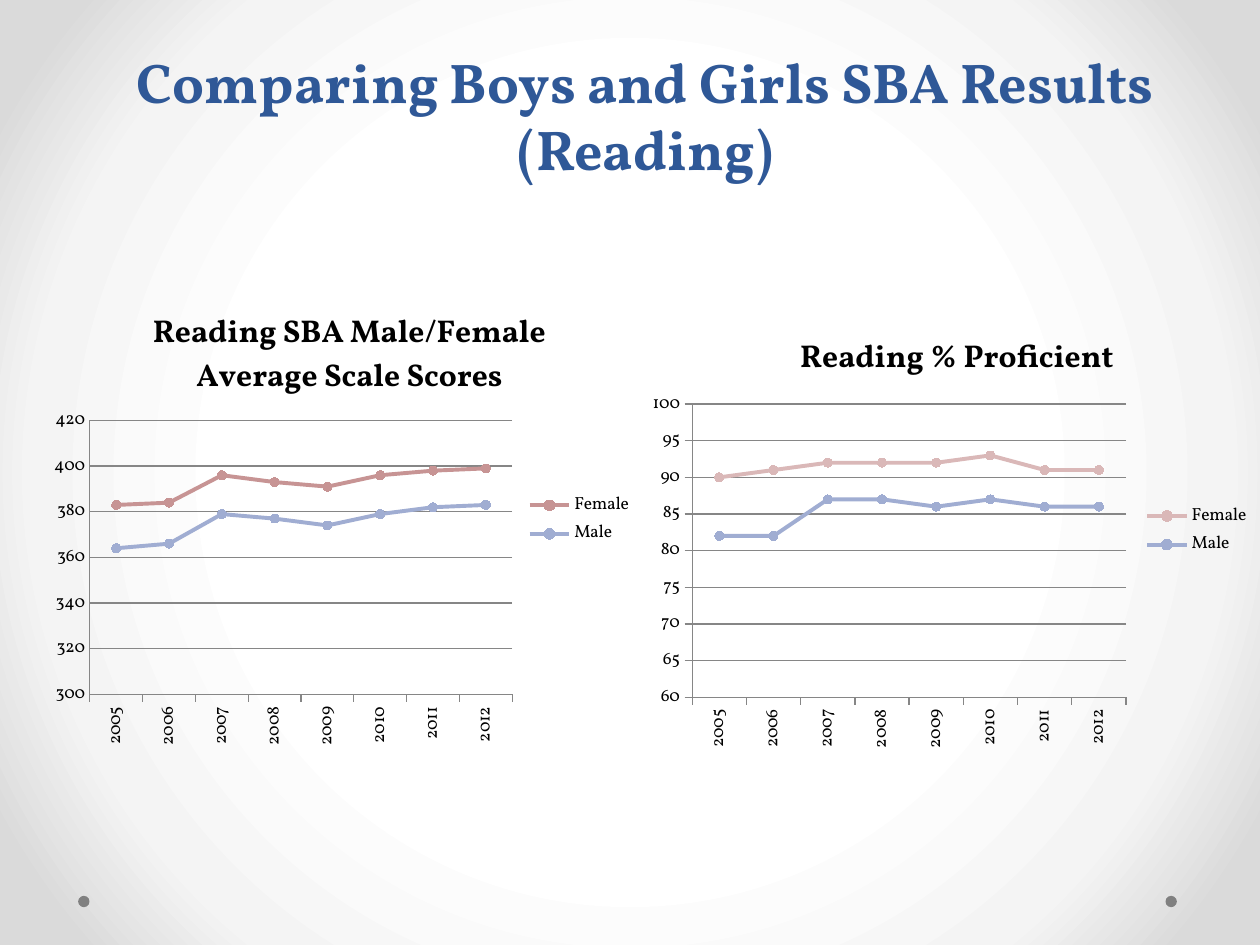
import lxml.etree
import pptx
import pptx.chart.data
import pptx.dml.color
import pptx.enum.chart
import pptx.enum.shapes
import pptx.enum.text
import pptx.oxml
import pptx.oxml.ns
import pptx.util

Pt = pptx.util.Pt
RGBColor = pptx.dml.color.RGBColor
XL = pptx.enum.chart
qn = pptx.oxml.ns.qn

FONT = "Vollkorn"
BLACK = RGBColor(0x00, 0x00, 0x00)
TITLE_BLUE = RGBColor(0x2F, 0x58, 0x97)
DOT_GRAY = RGBColor(0x80, 0x80, 0x80)
GRID_GRAY = RGBColor(0x86, 0x86, 0x86)
ROSE = RGBColor(0xC7, 0x94, 0x94)
PALE_ROSE = RGBColor(0xDA, 0xB8, 0xB8)
PERIWINKLE = RGBColor(0xA0, 0xAD, 0xD2)
BACKDROP = [(50, RGBColor(0xFF, 0xFF, 0xFF)), (76, RGBColor(0xF4, 0xF4, 0xF4)),
            (92, RGBColor(0xDA, 0xDA, 0xDA))]

YEARS = [str(year) for year in range(2005, 2013)]
CHARTS = [
    dict(box=(23.76, 162, 344.88, 270), title="Reading SBA Male/Female Average Scale Scores",
         scale=(300, 420, 20), tick=XL.XL_TICK_MARK.NONE,
         title_at=(0.175, 0.04), plot_at=(0.08, 0.29, 0.7, 0.58),
         series=[("Female", ROSE, (383, 384, 396, 393, 391, 396, 398, 399)),
                 ("Male", PERIWINKLE, (364, 366, 379, 377, 374, 379, 382, 383))]),
    dict(box=(367.2, 174.24, 354.24, 257.76), title="Reading % Proficient",
         scale=(60, 100, 5), tick=XL.XL_TICK_MARK.OUTSIDE,
         title_at=(0.245, 0.05), plot_at=(0.08, 0.22, 0.7, 0.65),
         series=[("Female", PALE_ROSE, (90, 91, 92, 92, 92, 93, 91, 91)),
                 ("Male", PERIWINKLE, (82, 82, 87, 87, 86, 87, 86, 86))]),
]


def set_attrs(obj, values):
    for name, value in values.items():
        setattr(obj, name, value)


def set_font(font, size, color=BLACK, bold=False):
    set_attrs(font, dict(name=FONT, size=Pt(size), bold=bold))
    font.color.rgb = color


def set_line(line, width, color):
    line.width = Pt(width)
    line.color.rgb = color


def set_layout(parent, index, place, inner=False):
    """Give a chart part a manual position, in fractions of the chart."""
    for old in parent.findall(qn("c:layout")):
        parent.remove(old)
    layout = lxml.etree.Element(qn("c:layout"))
    manual = lxml.etree.SubElement(layout, qn("c:manualLayout"))
    settings = [("layoutTarget", "inner")] if inner else []
    settings += [("xMode", "edge"), ("yMode", "edge")]
    settings += zip("xywh", place)
    for tag, value in settings:
        lxml.etree.SubElement(manual, qn("c:" + tag)).set("val", str(value))
    parent.insert(index, layout)


def add_backdrop(slide):
    """Radial gradient, light in the middle."""
    fill = slide.background.fill
    fill.gradient()
    grad = slide.background._cSld.find(".//" + qn("a:gradFill"))
    stops = "".join(f'<a:gs pos="{pos * 1000}"><a:srgbClr val="{color}"/></a:gs>'
                    for pos, color in BACKDROP)
    new = pptx.oxml.parse_xml(
        f'<a:gradFill {pptx.oxml.ns.nsdecls("a")} rotWithShape="1"><a:gsLst>{stops}</a:gsLst>'
        '<a:path path="circle"><a:fillToRect l="50000" t="50000" r="50000" b="50000"/></a:path>'
        '</a:gradFill>')
    grad.getparent().replace(grad, new)


def add_dot(slide, left, top, size):
    sp = slide.shapes.add_shape(pptx.enum.shapes.MSO_SHAPE.OVAL,
                                Pt(left), Pt(top), Pt(size), Pt(size))
    sp.shadow.inherit = False
    sp.fill.solid()
    sp.fill.fore_color.rgb = DOT_GRAY
    sp.line.fill.background()


def add_title(slide, box, lines):
    tf = slide.shapes.add_textbox(*map(Pt, box)).text_frame
    set_attrs(tf, dict(word_wrap=False,
                       auto_size=pptx.enum.text.MSO_AUTO_SIZE.SHAPE_TO_FIT_TEXT))
    for i, line in enumerate(lines):
        p = tf.add_paragraph() if i else tf.paragraphs[0]
        p.alignment = pptx.enum.text.PP_ALIGN.CENTER
        r = p.add_run()
        r.text = line
        set_font(r.font, 32, TITLE_BLUE, True)


def add_score_chart(slide, box, title, scale, tick, title_at, plot_at, series):
    data = pptx.chart.data.CategoryChartData()
    data.categories = YEARS
    for name, _, values in series:
        data.add_series(name, values)
    chart = slide.shapes.add_chart(XL.XL_CHART_TYPE.LINE_MARKERS, *map(Pt, box), data).chart
    set_font(chart.font, 10)

    # Title and legend
    chart.has_title = True
    p = chart.chart_title.text_frame.paragraphs[0]
    r = p.add_run()
    r.text = title
    set_font(r.font, 18, bold=True)
    set_layout(chart.chart_title._element, 1, title_at)
    chart.has_legend = True
    set_attrs(chart.legend, dict(position=XL.XL_LEGEND_POSITION.RIGHT, include_in_layout=False))

    # Axes
    low, high, step = scale
    val, cat = chart.value_axis, chart.category_axis
    set_attrs(val, dict(minimum_scale=low, maximum_scale=high, major_unit=step,
                        major_tick_mark=tick, has_major_gridlines=True))
    cat.major_tick_mark = XL.XL_TICK_MARK.OUTSIDE
    for axis in (val, cat):
        set_font(axis.tick_labels.font, 10)
        set_line(axis.format.line, 0.75, GRID_GRAY)
    set_line(val.major_gridlines.format.line, 0.75, GRID_GRAY)
    cat._element.find(qn("c:txPr")).find(qn("a:bodyPr")).set("rot", "-5400000")

    # Lines and markers
    plot = chart.plots[0]
    plot.vary_by_categories = False
    for s, (_, color, _) in zip(plot.series, series):
        s.smooth = False
        set_line(s.format.line, 2.25, color)
        set_attrs(s.marker, dict(style=XL.XL_MARKER_STYLE.CIRCLE, size=5))
        s.marker.format.fill.solid()
        s.marker.format.fill.fore_color.rgb = color
        set_line(s.marker.format.line, 0.75, color)
    set_layout(chart._chartSpace.find(".//" + qn("c:plotArea")), 0, plot_at, inner=True)


def main():
    prs = pptx.Presentation()
    set_attrs(prs, dict(slide_width=Pt(720), slide_height=Pt(540)))
    slide = prs.slides.add_slide(prs.slide_layouts[6])
    add_backdrop(slide)
    for left in (666, 44.64):
        add_dot(slide, left, 511.92, 6.48)
    for spec in CHARTS:
        add_score_chart(slide, **spec)
    add_title(slide, (69.12, 23.76, 599.76, 84.96),
              ["Comparing Boys and Girls SBA Results", "(Reading)"])
    prs.save("out.pptx")


if __name__ == "__main__":
    main()
